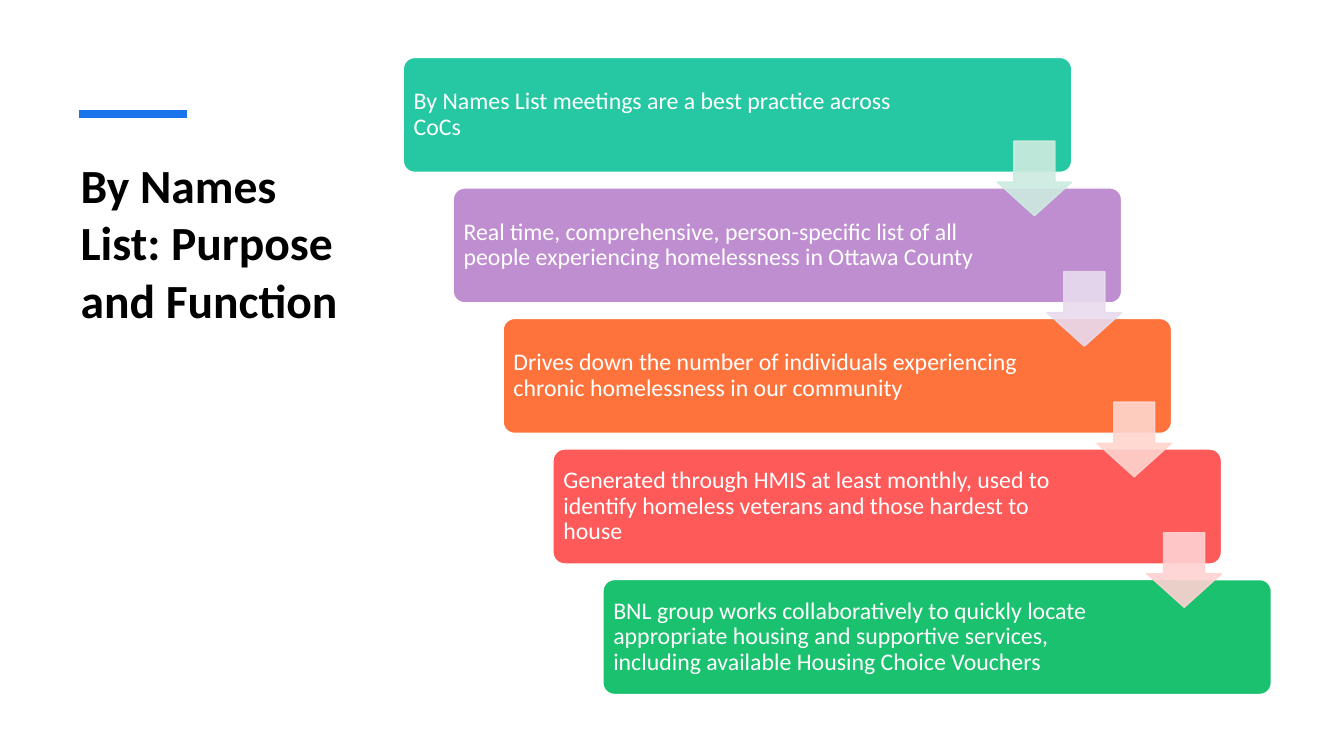
"""Build the By Names List slide: a staircase of five boxes linked by arrows."""
from lxml import etree
from pptx import Presentation
from pptx.dml.color import RGBColor
from pptx.enum.shapes import MSO_CONNECTOR, MSO_SHAPE
from pptx.enum.text import MSO_ANCHOR, MSO_AUTO_SIZE, PP_ALIGN
from pptx.oxml.ns import qn
from pptx.util import Inches, Pt

ROUND, DOWN = MSO_SHAPE.ROUNDED_RECTANGLE, MSO_SHAPE.DOWN_ARROW
TOP, MIDDLE, LEFT = MSO_ANCHOR.TOP, MSO_ANCHOR.MIDDLE, PP_ALIGN.LEFT
STRAIGHT, NO_FIT = MSO_CONNECTOR.STRAIGHT, MSO_AUTO_SIZE.NONE

FONT = "Calibri"
COLORS = {
    "black": "000000", "white": "FFFFFF", "blue": "1973EB",
    "teal": "25C8A2", "purple": "BF8ED1", "orange": "FE733C",
    "red": "FE5A5A", "green": "1AC16E",
    "mint": "CDEBE0", "lilac": "E8DBEE", "peach": "FFD5CE", "pink": "FFD2D2",
}
STEPS = [
    ("teal", "By Names List meetings are a best practice across CoCs"),
    ("purple", "Real time, comprehensive, person-specific list of all people "
               "experiencing homelessness in Ottawa County"),
    ("orange", "Drives down the number of individuals experiencing chronic "
               "homelessness in our community"),
    ("red", "Generated through HMIS at least monthly, used to identify homeless "
            "veterans and those hardest to house"),
    ("green", "BNL group works collaboratively to quickly locate appropriate housing "
              "and supportive services, including available Housing Choice Vouchers"),
]
ARROWS = ["mint", "lilac", "peach", "pink"]
DX, DY = 1.98 / 4, 5.18 / 4


def write(frame, text, size, color, bold=False):
    frame.text = text
    frame.word_wrap = True
    para = frame.paragraphs[0]
    para.alignment = LEFT
    font = para.runs[0].font
    font.name, font.size, font.bold = FONT, Pt(size), bold
    font.color.rgb = RGBColor.from_string(COLORS[color])


def block(kind, left, top, width, height, fill, edge):
    shape = slide.shapes.add_shape(
        kind, Inches(left), Inches(top), Inches(width), Inches(height))
    shape.shadow.inherit = False
    shape.fill.solid()
    shape.fill.fore_color.rgb = RGBColor.from_string(COLORS[fill])
    shape.line.color.rgb = RGBColor.from_string(COLORS[edge])
    shape.line.width = Pt(1)
    return shape


deck = Presentation()
deck.slide_width, deck.slide_height = Inches(13.33), Inches(7.5)
slide = deck.slides.add_slide(deck.slide_layouts[5])

title = slide.shapes.title
title.left, title.top = Inches(0.7), Inches(1.5)
title.width, title.height = Inches(2.9), Inches(4.54)
write(title.text_frame, "By Names List: Purpose and Function", 34, "black", True)
title.text_frame.vertical_anchor = TOP
title.text_frame.auto_size = NO_FIT

rule = slide.shapes.add_connector(
    STRAIGHT, Inches(0.78), Inches(1.13), Inches(1.85), Inches(1.13))
rule.line.color.rgb = RGBColor.from_string(COLORS["blue"])
rule.line.width = Pt(6)
etree.SubElement(rule._element.spPr, qn("a:effectLst"))

for i, (fill, text) in enumerate(STEPS):
    box = block(ROUND, 4 + DX * i, 0.57 + DY * i, 6.63, 1.14, fill, "white")
    box.adjustments[0] = 0.1
    frame = box.text_frame
    write(frame, text, 17, "white")
    frame.paragraphs[0].line_spacing = 0.9
    frame.vertical_anchor = MIDDLE
    frame.margin_left = frame.margin_top = frame.margin_bottom = Inches(0.07)
    frame.margin_right = Inches(1.31)

for i, tint in enumerate(ARROWS):
    arrow = block(DOWN, 9.89 + DX * i, 1.4 + DY * i, 0.74, 0.74, tint, tint)
    arrow.adjustments[0], arrow.adjustments[1] = 0.55, 0.45
    for color in arrow._element.spPr.iter(qn("a:srgbClr")):
        etree.SubElement(color, qn("a:alpha"), val="90000")

deck.save("out.pptx")
